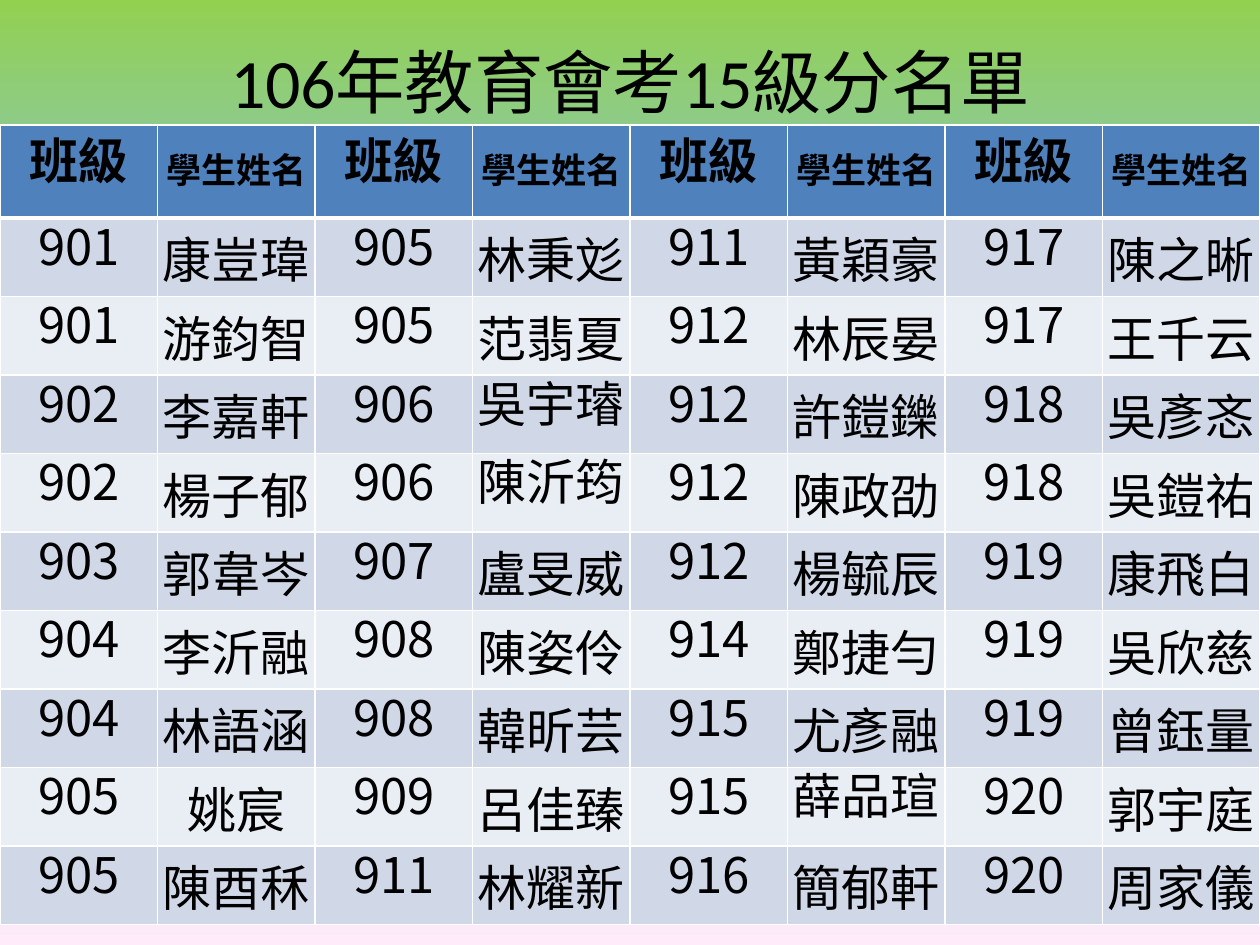
from dataclasses import dataclass

from lxml.etree import SubElement
from pptx import Presentation
from pptx.dml.color import RGBColor
from pptx.enum.text import MSO_ANCHOR as Anchor, PP_ALIGN as Align
from pptx.oxml.ns import qn
from pptx.util import Inches, Pt


@dataclass(frozen=True)
class Theme:
    ink: str = "000000"
    header: str = "4F81BD"
    bands: tuple = ("D0D8E8", "E9EDF4")
    border: str = "FFFFFF"
    backdrop: tuple = ((0, "92D050"), (40, "85C2FF"), (70, "C4D6EB"), (100, "FFEBFA"))
    latin: str = "Calibri"
    asian: str = "Noto Sans CJK SC"
    title_size: float = 39.6
    body_size: float = 28
    label_size: float = 20
    title_spacing: float = 45
    row_spacing: float = 25
    thin: float = 1
    thick: float = 3


TITLE = "106年教育會考15級分名單"
HEADINGS = ["班級", "學生姓名"] * 4
STUDENTS = [line.split() for line in """
901 康豈瑋 905 林秉彣 911 黃穎豪 917 陳之晰
901 游鈞智 905 范翡夏 912 林辰晏 917 王千云
902 李嘉軒 906 吳宇璿 912 許鎧鑠 918 吳彥忞
902 楊子郁 906 陳沂筠 912 陳政劭 918 吳鎧祐
903 郭韋岑 907 盧旻威 912 楊毓辰 919 康飛白
904 李沂融 908 陳姿伶 914 鄭捷勻 919 吳欣慈
904 林語涵 908 韓昕芸 915 尤彥融 919 曾鈺量
905 姚宸 909 呂佳臻 915 薛品瑄 920 郭宇庭
905 陳酉秝 911 林耀新 916 簡郁軒 920 周家儀
""".strip().splitlines()]
TIGHT_NAMES = {"吳宇璿", "陳沂筠", "薛品瑄"}


def apply(target, values):
    for name, value in values.items():
        setattr(target, name, value)


class SlideBuilder:
    def __init__(self, slide, theme):
        self.slide = slide
        self.theme = theme

    def background(self):
        fill = self.slide.background.fill
        fill.gradient()
        fill.gradient_angle = 270
        stops = next(self.slide.element.iter(qn("a:gsLst")))
        for stop in list(stops):
            stops.remove(stop)
        for percent, color in self.theme.backdrop:
            stop = SubElement(stops, qn("a:gs"), pos=str(percent * 1000))
            SubElement(stop, qn("a:srgbClr"), val=color)

    def add_text(self, paragraph, text, size, font=None, bold=False, spacing=None):
        apply(paragraph, {"alignment": Align.CENTER,
                          "line_spacing": Pt(spacing) if spacing else None})
        run = paragraph.add_run()
        run.text = text
        apply(run.font, {"size": Pt(size), "bold": bold, "name": font or self.theme.latin})
        run.font.color.rgb = RGBColor.from_string(self.theme.ink)
        SubElement(run.font._element, qn("a:ea"), typeface=self.theme.asian)

    def title(self, text, left, top, width, height):
        box = self.slide.shapes.add_textbox(*map(Inches, (left, top, width, height)))
        apply(box.text_frame, {"word_wrap": True, "vertical_anchor": Anchor.TOP})
        self.add_text(box.text_frame.paragraphs[0], text, self.theme.title_size,
                      spacing=self.theme.title_spacing)

    def cell_borders(self, cell, top, bottom):
        properties = cell._tc.get_or_add_tcPr()
        thin = self.theme.thin
        for side, width in (("L", thin), ("R", thin), ("T", top), ("B", bottom)):
            line = SubElement(properties, qn(f"a:ln{side}"), w=str(int(Pt(width))))
            SubElement(SubElement(line, qn("a:solidFill")), qn("a:srgbClr"),
                       val=self.theme.border)

    def text_style(self, row, text):
        theme = self.theme
        if row == 0:
            size = theme.body_size if text == HEADINGS[0] else theme.label_size
            return {"size": size, "bold": True, "spacing": theme.row_spacing}
        if text.isdigit():
            return {"size": theme.body_size, "font": theme.asian,
                    "spacing": theme.row_spacing}
        return {"size": theme.body_size,
                "spacing": theme.row_spacing if text in TIGHT_NAMES else None}

    def cell(self, cell, row, text):
        theme = self.theme
        apply(cell, {"margin_left": Inches(0.02), "margin_right": Inches(0.02),
                     "margin_top": 0, "margin_bottom": 0,
                     "vertical_anchor": Anchor.MIDDLE})
        self.cell_borders(cell, top=theme.thick if row == 1 else theme.thin,
                          bottom=theme.thick if row == 0 else theme.thin)
        color = theme.bands[(row - 1) % 2] if row else theme.header
        cell.fill.solid()
        cell.fill.fore_color.rgb = RGBColor.from_string(color)
        self.add_text(cell.text_frame.paragraphs[0], text, **self.text_style(row, text))

    def table(self, rows, left, top, width, height, header_height):
        table = self.slide.shapes.add_table(
            len(rows), len(rows[0]), *map(Inches, (left, top, width, height))).table
        body_height = (height - header_height) / (len(rows) - 1)
        for row, texts in enumerate(rows):
            table.rows[row].height = Inches(body_height if row else header_height)
            for column, text in enumerate(texts):
                self.cell(table.cell(row, column), row, text)


def main():
    presentation = Presentation()
    apply(presentation, {"slide_width": Inches(10), "slide_height": Inches(7.5)})
    slide = presentation.slides.add_slide(presentation.slide_layouts[6])
    builder = SlideBuilder(slide, Theme())
    builder.background()
    builder.title(TITLE, 0.5, 0.3, 9, 1.25)
    builder.table([HEADINGS, *STUDENTS], 0, 0.99, 10, 6.35, header_height=0.74)
    presentation.save("out.pptx")


if __name__ == "__main__":
    main()
